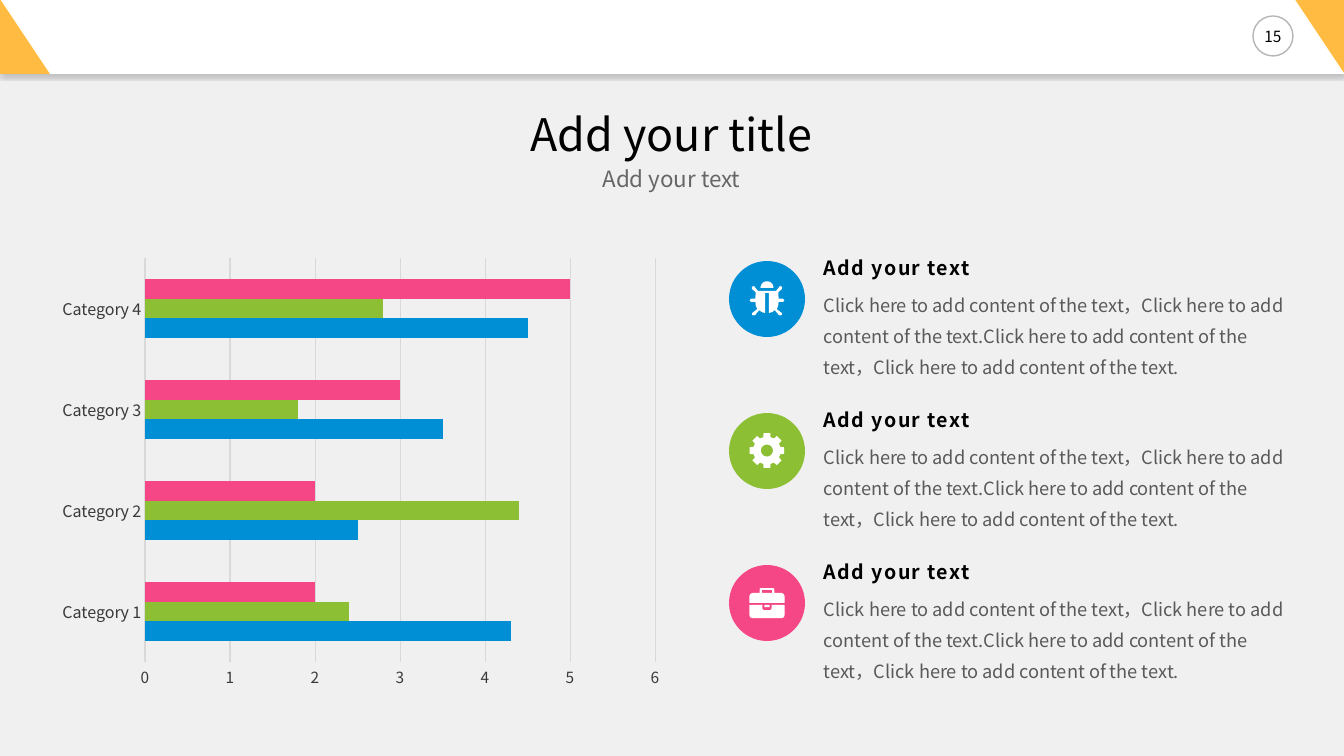
import math
import lxml.etree
import pptx
import pptx.chart.data
import pptx.dml.color
import pptx.enum.chart
import pptx.enum.shapes
import pptx.enum.text
import pptx.oxml
import pptx.util

THEME = {
    "font": "Noto Sans CJK JP",
    "page": "F0F0F0", "white": "FFFFFF", "black": "000000", "corner": "FFBB42",
    "ring": "0D0D0D", "subtitle": "666666", "body": "595959",
    "axis": "3B3838", "grid": "D9D9D9",
    "blue": "008FD5", "green": "8DBF34", "pink": "F54785",
    "title_pt": 32, "subtitle_pt": 16, "heading_pt": 14, "body_pt": 13,
    "number_pt": 11, "category_pt": 11.5, "value_pt": 11,
}

TITLE = "Add your title"
SUBTITLE = "Add your text"
PAGE_NUMBER = "15"
HEADING = "Add your text"
SENTENCE = "Click here to add content of the text"
DETAIL = f"{SENTENCE}，{SENTENCE}.{SENTENCE}，{SENTENCE}."
CATEGORIES = ["Category 1", "Category 2", "Category 3", "Category 4"]
SERIES = [
    ("Series 1", "blue", (4.3, 2.5, 3.5, 4.5)),
    ("Series 2", "green", (2.4, 4.4, 1.8, 2.8)),
    ("Series 3", "pink", (2, 2, 3, 5)),
]
BUG_BODY = [(20, 120), (20, 320), (50, 312), (78, 292), (118, 340), (130, 344),
            (148, 340), (150, 322), (98, 282), (112, 245), (116, 210), (160, 210),
            (174, 195), (160, 178), (116, 178), (114, 112), (150, 80), (150, 58),
            (130, 50), (90, 100)]
CASE_LID = [(62, 0), (70, 5), (74, 20), (74, 50), (146, 50), (168, 60),
            (176, 82), (176, 150)]
CASE_HANDLE = [(52, 20), (52, 50)]
CASE_BASE = [(34, 222), (46, 205), (46, 170), (176, 170), (176, 272),
             (168, 293), (146, 302)]
CASE_CLASP = [(26, 170), (26, 192)]


def mirrored(half):
    return half + [(-x, y) for x, y in reversed(half)]


def arc(radius, centre_y, degrees):
    return [(radius * math.cos(math.radians(d)), centre_y + radius * math.sin(math.radians(d)))
            for d in degrees]


def gear(teeth=8):
    outline = []
    for tooth in range(teeth):
        middle = tooth * 360 / teeth
        for radius, turn in ((139, -15), (176, -11), (176, 11), (139, 15)):
            outline += arc(radius, 176, [middle + turn])
    return outline


ICON_BUG = [mirrored(BUG_BODY), arc(65, 68, range(180, 361, 10))]
ICON_GEAR = [gear(), arc(60, 176, range(0, 360, 10))]
ICON_CASE = [mirrored(part) for part in (CASE_LID, CASE_HANDLE, CASE_BASE, CASE_CLASP)]
POINTS = [("blue", ICON_BUG, 20), ("green", ICON_GEAR, 20), ("pink", ICON_CASE, 23)]

PX = 914400 / 100.8
FIRST_ROW, ROW_PITCH, DISC = 261, 152, 76
DISC_LEFT, TEXT_LEFT, TEXT_WIDTH = 729, 824, 470
HEADER_HEIGHT, CORNER_WIDTH = 74, 50
KIND = pptx.enum.shapes.MSO_SHAPE
CENTER = pptx.enum.text.PP_ALIGN.CENTER
MIDDLE = pptx.enum.text.MSO_ANCHOR.MIDDLE


def px(*lengths):
    return [round(length * PX) for length in lengths]


def rgb(name):
    return pptx.dml.color.RGBColor.from_string(THEME[name])


def assign(target, values):
    for key, value in values.items():
        setattr(target, key, value)


def paint(shape, color):
    shape.shadow.inherit = False
    shape.fill.solid()
    shape.fill.fore_color.rgb = rgb(color)
    shape.line.fill.background()
    return shape


def draw(shapes, kind, box, color):
    return paint(shapes.add_shape(kind, *px(*box)), color)


def write(shapes, text, box, color, size, paragraph_format=None, bold=False, spacing=0, anchor=None):
    frame = shapes.add_textbox(*px(*box)).text_frame
    assign(frame, {"word_wrap": True, "margin_left": 0, "margin_right": 0,
                   "margin_top": 0, "margin_bottom": 0, "vertical_anchor": anchor})
    paragraph = frame.paragraphs[0]
    assign(paragraph, paragraph_format or {})
    run = paragraph.add_run()
    run.text = text
    assign(run.font, {"name": THEME["font"], "size": pptx.util.Pt(THEME[size]), "bold": bold})
    run.font.color.rgb = rgb(color)
    properties = run.font._element
    if spacing:
        properties.set("spc", str(spacing))
    east_asian = lxml.etree.SubElement(properties, pptx.oxml.ns.qn("a:ea"))
    east_asian.set("typeface", THEME["font"])


def draw_icon(shapes, contours, centre_x, top):
    builder = None
    for contour in contours:
        points = [(round(x), round(y)) for x, y in contour]
        if builder is None:
            builder = shapes.build_freeform(*points[0], scale=PX / 10)
        else:
            builder.move_to(*points[0])
        builder.add_line_segments(points[1:], close=True)
    paint(builder.convert_to_shape(*px(centre_x, top)), "white")


def add_header(shapes):
    band = draw(shapes, KIND.RECTANGLE, (0, -1, 1344, 75), "white")
    effects = band._element.spPr.find(pptx.oxml.ns.qn("a:effectLst"))
    effects.append(pptx.oxml.parse_xml(
        f'<a:outerShdw {pptx.oxml.ns.nsdecls("a")} blurRad="38100" dist="25400" dir="5400000" '
        'algn="t" rotWithShape="0"><a:srgbClr val="000000"><a:alpha val="20000"/>'
        '</a:srgbClr></a:outerShdw>'))
    ring = draw(shapes, KIND.OVAL, (1253, 16, 40, 40), "white")
    ring.line.color.rgb = rgb("ring")
    ring.line.width = pptx.util.Pt(1)
    ring_color = ring.line._ln.find(".//" + pptx.oxml.ns.qn("a:srgbClr"))
    lxml.etree.SubElement(ring_color, pptx.oxml.ns.qn("a:alpha")).set("val", "30000")
    for left, top, rotation in ((0, -1, 0), (1344 - CORNER_WIDTH, -2, 180)):
        corner = draw(shapes, KIND.RIGHT_TRIANGLE, (left, top, CORNER_WIDTH, HEADER_HEIGHT + 1), "corner")
        corner.rotation = rotation
    write(shapes, PAGE_NUMBER, (1253, 16, 40, 40), "black", "number_pt",
          {"alignment": CENTER}, anchor=MIDDLE)


def add_bars(shapes):
    data = pptx.chart.data.CategoryChartData()
    data.categories = CATEGORIES
    for name, _, values in SERIES:
        data.add_series(name, values)
    chart = shapes.add_chart(pptx.enum.chart.XL_CHART_TYPE.BAR_CLUSTERED,
                             *px(50, 249, 622, 448), data).chart
    assign(chart, {"has_legend": False, "has_title": False})
    assign(chart.plots[0], {"gap_width": 219, "overlap": 0, "vary_by_categories": False})
    for series, (_, color, _) in zip(chart.plots[0].series, SERIES):
        series.format.fill.solid()
        series.format.fill.fore_color.rgb = rgb(color)
    no_tick = pptx.enum.chart.XL_TICK_MARK.NONE
    for axis, size in ((chart.category_axis, "category_pt"), (chart.value_axis, "value_pt")):
        assign(axis, {"major_tick_mark": no_tick, "minor_tick_mark": no_tick})
        font = axis.tick_labels.font
        assign(font, {"name": THEME["font"], "size": pptx.util.Pt(THEME[size])})
        font.color.rgb = rgb("axis")
    assign(chart.value_axis, {"minimum_scale": 0, "maximum_scale": 6, "major_unit": 1})
    chart.value_axis.format.line.fill.background()
    for line in (chart.category_axis.format.line, chart.value_axis.major_gridlines.format.line):
        line.color.rgb = rgb("grid")
        line.width = pptx.util.Pt(0.75)


def add_points(shapes):
    before = pptx.util.Pt(10)
    for row, (color, contours, icon_drop) in enumerate(POINTS):
        top = FIRST_ROW + row * ROW_PITCH
        badge = shapes.add_group_shape().shapes
        draw(badge, KIND.OVAL, (DISC_LEFT, top, DISC, DISC), color)
        draw_icon(badge, contours, DISC_LEFT + DISC / 2, top + icon_drop)
        write(shapes, HEADING, (TEXT_LEFT, top - 2, TEXT_WIDTH, 35), "black", "heading_pt",
              {"line_spacing": 0.9, "space_before": before}, bold=True, spacing=100)
        write(shapes, DETAIL, (TEXT_LEFT, top + 25, TEXT_WIDTH, 92), "body", "body_pt",
              {"line_spacing": 1.4, "space_before": before})


def main():
    deck = pptx.Presentation()
    deck.slide_width, deck.slide_height = px(1344, 756)
    slide = deck.slides.add_slide(deck.slide_layouts[6])
    slide.background.fill.solid()
    slide.background.fill.fore_color.rgb = rgb("page")
    add_header(slide.shapes)
    centred = {"alignment": CENTER, "line_spacing": 0.9}
    write(slide.shapes, TITLE, (50, 110, 1243, 54), "black", "title_pt", centred, anchor=MIDDLE)
    write(slide.shapes, SUBTITLE, (50, 168, 1243, 27), "subtitle", "subtitle_pt", centred)
    add_bars(slide.shapes)
    add_points(slide.shapes)
    deck.save("out.pptx")


if __name__ == "__main__":
    main()
